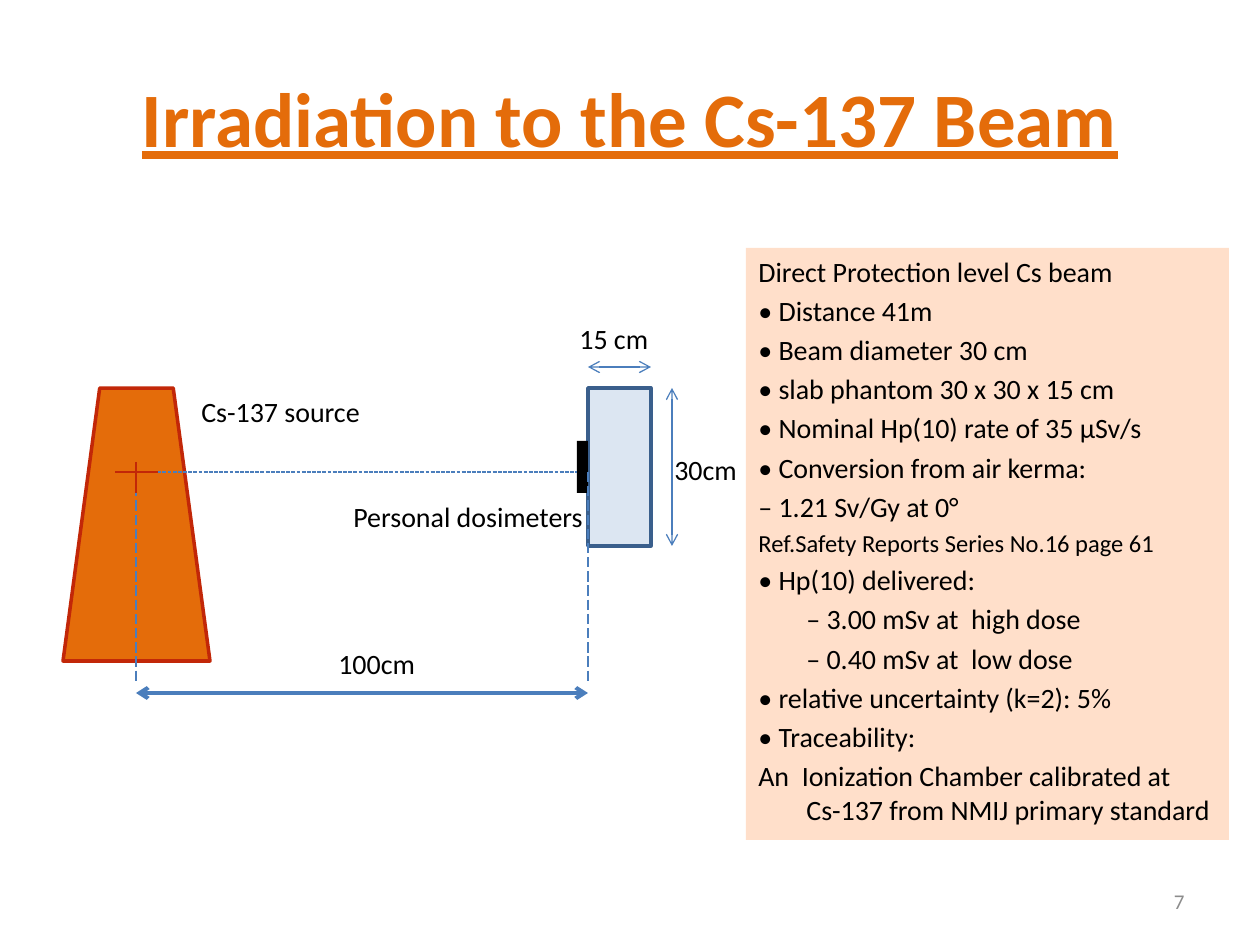
"""Build the slide on irradiating dosimeters in a Cs-137 beam."""
from lxml import etree
from pptx import Presentation
from pptx.dml.color import RGBColor
from pptx.enum.dml import MSO_LINE
from pptx.enum.shapes import MSO_CONNECTOR, MSO_SHAPE
from pptx.enum.text import MSO_ANCHOR, PP_ALIGN
from pptx.oxml.ns import qn
from pptx.util import Pt

PX = 914400 / 126
FONT = "Calibri"
STRAIGHT = MSO_CONNECTOR.STRAIGHT
RECT, TRAPEZOID = MSO_SHAPE.RECTANGLE, MSO_SHAPE.TRAPEZOID
LEFT, CENTER, RIGHT = PP_ALIGN.LEFT, PP_ALIGN.CENTER, PP_ALIGN.RIGHT
TOP, MIDDLE = MSO_ANCHOR.TOP, MSO_ANCHOR.MIDDLE
SHORT_DASH, LONG_DASH = MSO_LINE.SQUARE_DOT, MSO_LINE.LONG_DASH
COLORS = {
    "orange": "E46C0A", "red": "C22708", "blue": "4B7EBC", "navy": "3A5F8C",
    "pale": "DCE6F2", "peach": "FFC197", "black": "000000", "gray": "8C8C8C",
}

TITLE = "Irradiation to the Cs-137 Beam"
HANG = 48
NOTES = [
    ("Direct Protection level Cs beam", 16, 0),
    ("• Distance 41m", 16, 0),
    ("• Beam diameter 30 cm", 16, 0),
    ("• slab phantom 30 x 30 x 15 cm", 16, 0),
    ("• Nominal Hp(10) rate of 35 μSv/s", 16, 0),
    ("• Conversion from air kerma:", 16, 0),
    ("– 1.21 Sv/Gy at 0°", 16, 0),
    ("Ref.Safety Reports Series No.16 page 61", 14, 0),
    ("• Hp(10) delivered:", 16, 0),
    ("– 3.00 mSv at  high dose", 16, 1),
    ("– 0.40 mSv at  low dose", 16, 1),
    ("• relative uncertainty (k=2): 5%", 16, 0),
    ("• Traceability:", 16, 0),
    ("An  Ionization Chamber calibrated at Cs-137 from NMIJ primary standard", 16, 0),
]
SOURCE_X, SOURCE_Y = 136, 472
SLAB_LEFT, SLAB_TOP, SLAB_RIGHT, SLAB_BOTTOM = 588, 388, 651, 546
DASH_END = 682
BLOCKS = [
    (TRAPEZOID, (63, 388, 147, 273), "orange", "red"),
    (RECT, (SLAB_LEFT, SLAB_TOP, SLAB_RIGHT - SLAB_LEFT, SLAB_BOTTOM - SLAB_TOP), "pale", "navy"),
    (RECT, (577, 441, 11, 52), "black", None),
]
LINES = [
    ((147, SOURCE_Y, 577, SOURCE_Y), "blue", 0.75, SHORT_DASH, False),
    ((SOURCE_X, 693, SLAB_LEFT, 693), "blue", 2.25, None, True),
    ((SOURCE_X, SOURCE_Y, SOURCE_X, DASH_END), "blue", 0.75, LONG_DASH, False),
    ((SLAB_LEFT, SOURCE_Y, SLAB_LEFT, DASH_END), "blue", 0.75, LONG_DASH, False),
    ((SOURCE_X, 462, SOURCE_X, 493), "red", 1.5, None, False),
    ((158, SOURCE_Y, 115, SOURCE_Y), "red", 1.5, None, False),
    ((SLAB_LEFT, 367, SLAB_RIGHT, 367), "blue", 0.75, None, True),
    ((672, SLAB_BOTTOM, 672, SLAB_TOP), "blue", 0.75, None, True),
]
LABELS = [
    ("Cs-137 source", (189, 388, 186, 47)),
    ("15 cm", (567, 315, 94, 47)),
    ("30cm", (662, 446, 88, 47)),
    ("100cm", (326, 640, 103, 47)),
    ("Personal dosimeters", (341, 493, 258, 47)),
]


def px(value):
    return round(value * PX)


def color(name):
    return RGBColor.from_string(COLORS[name])


def set_font(para, size, name):
    font = para.font
    font.name, font.size = FONT, Pt(size)
    font.color.rgb = color(name)
    return font


def add_text(page, text, place, size, name, align=LEFT, anchor=TOP, wrap=True):
    box = page.shapes.add_textbox(*map(px, place))
    frame = box.text_frame
    frame.word_wrap, frame.vertical_anchor = wrap, anchor
    frame.text = text
    para = frame.paragraphs[0]
    para.alignment = align
    return set_font(para, size, name)


def add_block(page, kind, place, fill, line):
    block = page.shapes.add_shape(kind, *map(px, place))
    block.shadow.inherit = False
    block.fill.solid()
    block.fill.fore_color.rgb = color(fill)
    if line:
        block.line.color.rgb = color(line)
        block.line.width = Pt(2)
    else:
        block.line.fill.background()
    return block


def add_line(page, ends, name, width, dash, arrows):
    line = page.shapes.add_connector(STRAIGHT, *map(px, ends))
    line.line.color.rgb = color(name)
    line.line.width = Pt(width)
    if dash:
        line.line.dash_style = dash
    properties = line._element.spPr
    if arrows:
        outline = properties.find(qn("a:ln"))
        for end in ("a:headEnd", "a:tailEnd"):
            etree.SubElement(outline, qn(end), type="arrow")
    etree.SubElement(properties, qn("a:effectLst"))


def add_notes(page):
    panel = add_block(page, RECT, (746, 248, 483, 592), "peach", None)
    tint = panel._element.spPr.find(qn("a:solidFill"))[0]
    etree.SubElement(tint, qn("a:alpha"), val="50000")
    frame = panel.text_frame
    frame.word_wrap, frame.vertical_anchor = True, TOP
    frame.text = "\n".join(text for text, _, _ in NOTES)
    for index, (para, (_, size, level)) in enumerate(zip(frame.paragraphs, NOTES)):
        para.alignment = LEFT
        layout = para._p.get_or_add_pPr()
        layout.set("marL", str(px(HANG)))
        layout.set("indent", str(px(HANG * (level - 1))))
        if index:
            para.space_before = Pt(size * 0.2)
        set_font(para, size, "black")


def main():
    deck = Presentation()
    deck.slide_width, deck.slide_height = px(1260), px(945)
    page = deck.slides.add_slide(deck.slide_layouts[6])
    heading = add_text(page, TITLE, (63, 38, 1134, 157), 44, "orange", CENTER, MIDDLE)
    heading.bold = heading.underline = True
    add_notes(page)
    for block in BLOCKS:
        add_block(page, *block)
    for line in LINES:
        add_line(page, *line)
    for text, place in LABELS:
        add_text(page, text, place, 16, "black", wrap=False)
    add_text(page, "7", (903, 876, 294, 50), 12, "gray", RIGHT, MIDDLE)
    deck.save("out.pptx")


if __name__ == "__main__":
    main()
